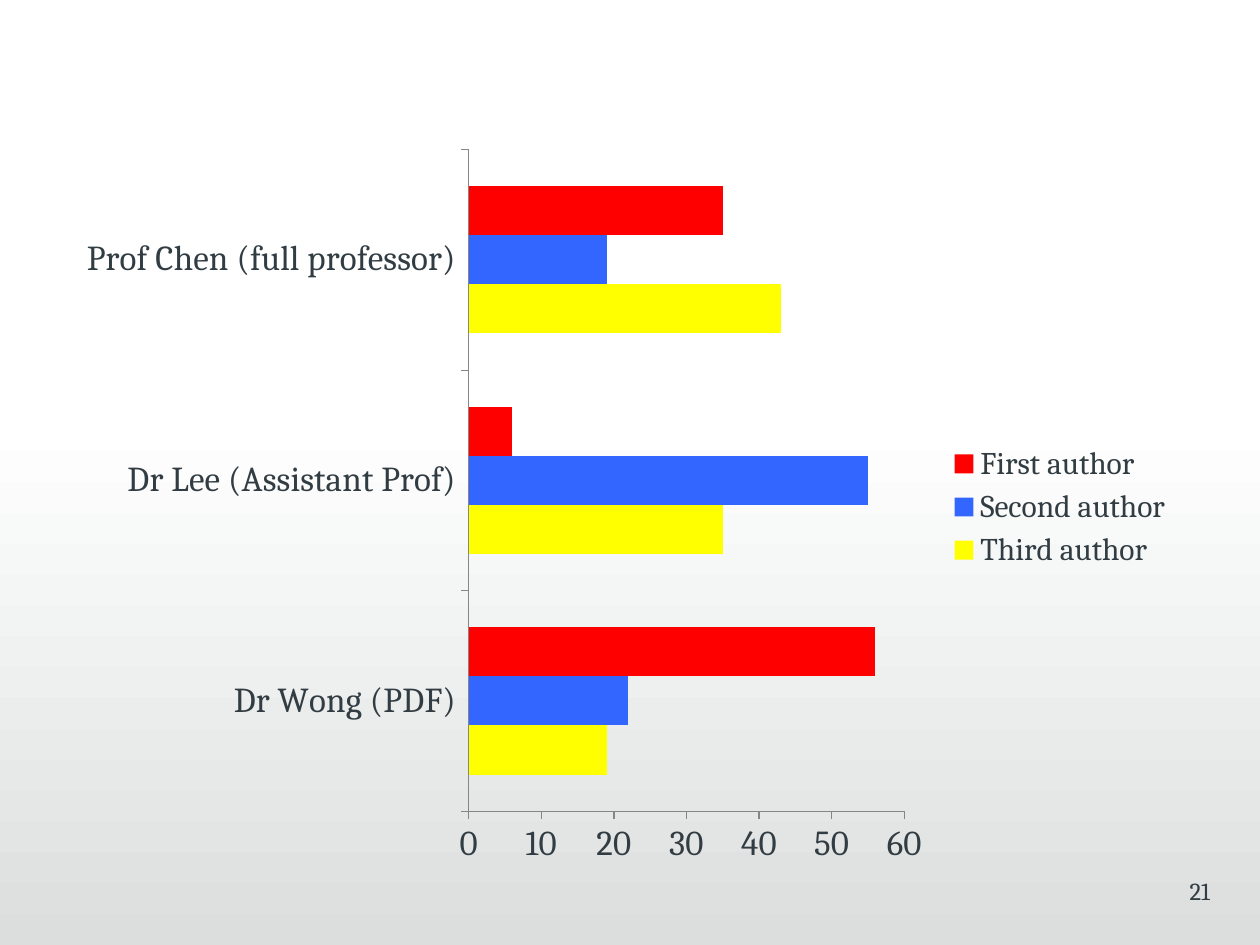
from pptx import Presentation
from pptx.chart.data import CategoryChartData
from pptx.dml.color import RGBColor
from pptx.enum.chart import XL_CHART_TYPE as ChartType
from pptx.enum.chart import XL_LEGEND_POSITION as LegendPosition
from pptx.enum.chart import XL_TICK_MARK as TickMark
from pptx.enum.shapes import MSO_SHAPE as Shape
from pptx.enum.text import PP_ALIGN as Align
from pptx.util import Pt

WHITE = RGBColor(0xFF, 0xFF, 0xFF)
MIST = RGBColor(0xDC, 0xDE, 0xDE)
SLATE = RGBColor(0x32, 0x3D, 0x43)
AXIS_GREY = RGBColor(0x86, 0x86, 0x86)
YELLOW = RGBColor(0xFF, 0xFF, 0x00)
BLUE = RGBColor(0x33, 0x66, 0xFF)
RED = RGBColor(0xFF, 0x00, 0x00)
FONT = "Cambria"

AUTHORS = ["Dr Wong (PDF)", "Dr Lee (Assistant Prof)", "Prof Chen (full professor)"]
POSITIONS = [
    ("Third author", (19, 35, 43), YELLOW),
    ("Second author", (22, 55, 19), BLUE),
    ("First author", (56, 6, 35), RED),
]


def style_font(font, size):
    font.name = FONT
    font.size = Pt(size)
    font.color.rgb = SLATE


prs = Presentation()
prs.slide_width, prs.slide_height = Pt(720), Pt(540)
slide = prs.slides.add_slide(prs.slide_layouts[6])
slide.background.fill.solid()
slide.background.fill.fore_color.rgb = WHITE

# Shading over the lower part of the slide
shade = slide.shapes.add_shape(Shape.RECTANGLE, Pt(-6.5), Pt(240), Pt(726.5), Pt(300))
shade.shadow.inherit = False
shade.line.fill.background()
shade.fill.gradient()
shade.fill.gradient_angle = 270
for stop, color, position in zip(shade.fill.gradient_stops, (WHITE, MIST), (0, 1)):
    stop.color.rgb = color
    stop.position = position

# Slide number
number_box = slide.shapes.add_textbox(Pt(541.5), Pt(497), Pt(150), Pt(36))
number = number_box.text_frame
number.word_wrap = True
number.margin_right = 0
number.text = "21"
number.paragraphs[0].alignment = Align.RIGHT
style_font(number.paragraphs[0].runs[0].font, 14)

# Publications by author position
counts = CategoryChartData()
counts.categories = AUTHORS
for name, values, _ in POSITIONS:
    counts.add_series(name, values)
chart = slide.shapes.add_chart(
    ChartType.BAR_CLUSTERED, Pt(36.75), Pt(77), Pt(641), Pt(425.5), counts
).chart
chart.has_title = False
style_font(chart.font, 10)

plot = chart.plots[0]
plot.gap_width = 150
plot.overlap = 0
plot.vary_by_categories = False
for series, (_, _, color) in zip(plot.series, POSITIONS):
    series.format.fill.solid()
    series.format.fill.fore_color.rgb = color
    series.invert_if_negative = False

for axis in (chart.category_axis, chart.value_axis):
    axis.has_major_gridlines = False
    axis.major_tick_mark = TickMark.OUTSIDE
    axis.minor_tick_mark = TickMark.NONE
    axis.format.line.color.rgb = AXIS_GREY
    axis.format.line.width = Pt(0.75)
    style_font(axis.tick_labels.font, 20)
chart.value_axis.minimum_scale = 0
chart.value_axis.maximum_scale = 60
chart.value_axis.major_unit = 10

chart.has_legend = True
chart.legend.position = LegendPosition.RIGHT
chart.legend.include_in_layout = False
style_font(chart.legend.font, 18)

prs.save("out.pptx")
